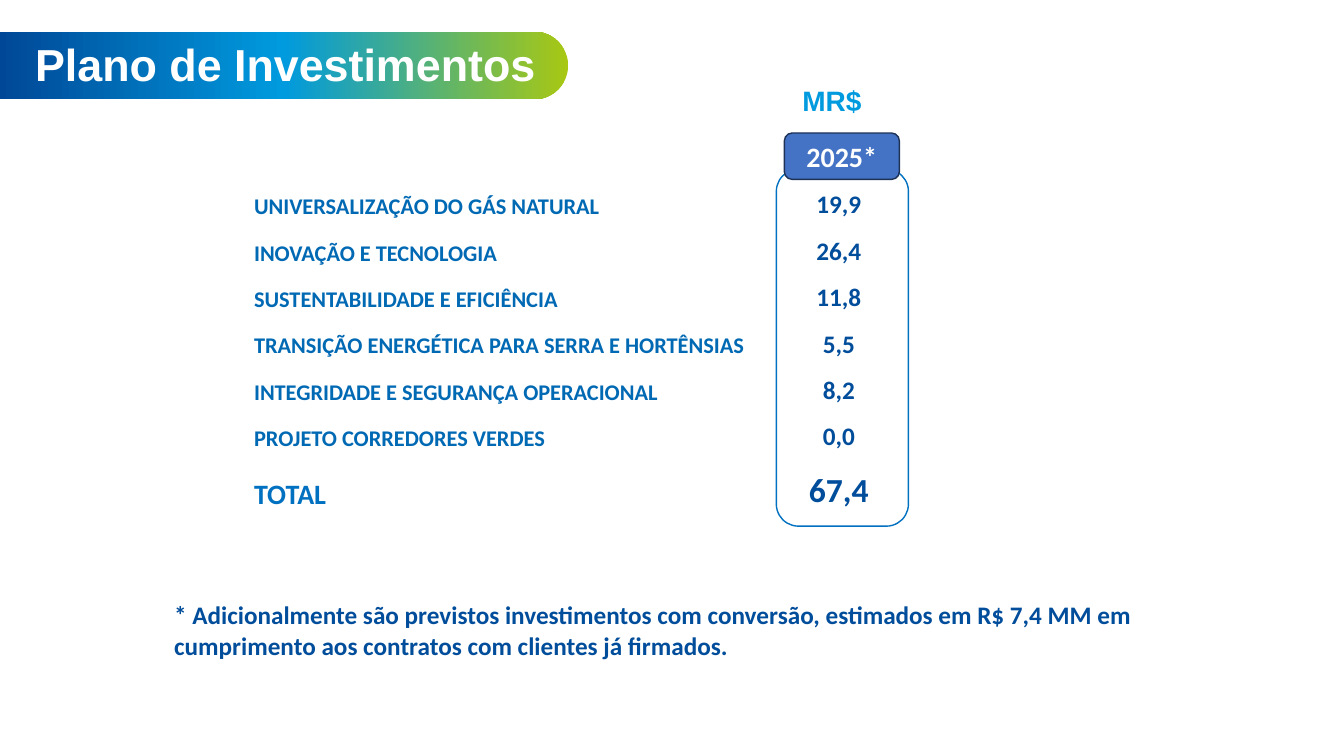
import copy
import pptx
import pptx.util
import pptx.dml.color
import pptx.enum.shapes
import pptx.enum.text
from pptx.util import Inches

theme = {
    "label": "0069B4", "value": "004D9B", "total": "0070C0",
    "unit": "009ADE", "white": "FFFFFF", "badge": "4472C4", "badge_line": "1E3256",
    "banner": [(0, "A8C813"), (0.5, "009ADE"), (1, "004897")],
    "title_size": 32, "heading_size": 20, "label_size": 16,
    "value_size": 18, "total_size": 24,
    "title_font": "Arial", "body_font": "Calibri",
}
SHAPE = pptx.enum.shapes.MSO_SHAPE
ANCHOR = pptx.enum.text.MSO_ANCHOR
CENTER = pptx.enum.text.PP_ALIGN.CENTER


def rgb(name):
    return pptx.dml.color.RGBColor.from_string(theme.get(name, name))


def write(frame, text, size, color, font="body_font", align=None):
    paragraph = frame.paragraphs[0]
    paragraph.text = text
    paragraph.alignment = align
    paragraph.font.name = theme[font]
    paragraph.font.size = pptx.util.Pt(theme[size])
    paragraph.font.bold = True
    paragraph.font.color.rgb = rgb(color)


presentation = pptx.Presentation()
presentation.slide_width = Inches(13.33)
presentation.slide_height = Inches(7.5)
slide = presentation.slides.add_slide(presentation.slide_layouts[6])

investments = [
    ("UNIVERSALIZAÇÃO DO GÁS NATURAL", "19,9"),
    ("INOVAÇÃO E TECNOLOGIA", "26,4"),
    ("SUSTENTABILIDADE E EFICIÊNCIA", "11,8"),
    ("TRANSIÇÃO ENERGÉTICA PARA SERRA E HORTÊNSIAS", "5,5"),
    ("INTEGRIDADE E SEGURANÇA OPERACIONAL", "8,2"),
    ("PROJETO CORREDORES VERDES", "0,0"),
    ("TOTAL", "67,4"),
]
table = slide.shapes.add_table(
    len(investments), 2, Inches(2.51), Inches(1.78), Inches(6.49), Inches(3.32)).table
table.first_row = False
table.horz_banding = False
table.columns[0].width = Inches(5.13)
table.columns[1].width = Inches(1.36)
for row in table.rows:
    row.height = Inches(0.46)
table.rows[0].height = Inches(0.41)
table.rows[len(investments) - 1].height = Inches(0.59)

for index, (label, value) in enumerate(investments):
    label_cell, value_cell = table.rows[index].cells
    for cell in (label_cell, value_cell):
        cell.fill.background()
        cell.vertical_anchor = ANCHOR.BOTTOM
        cell.margin_left = cell.margin_right = cell.margin_top = Inches(0.01)
        cell.margin_bottom = 0
    is_total = label == "TOTAL"
    write(label_cell.text_frame, label,
          "heading_size" if is_total else "label_size", "total" if is_total else "label")
    write(value_cell.text_frame, value,
          "total_size" if is_total else "value_size", "value", align=CENTER)

banner = slide.shapes.add_shape(
    SHAPE.ROUND_2_SAME_RECTANGLE, Inches(2.48), Inches(-2.17), Inches(0.67), Inches(5.64))
banner.rotation = 90
banner.adjustments[0] = 0.5
banner.adjustments[1] = 0
banner.shadow.inherit = False
banner.line.fill.background()
banner.fill.gradient()
banner.fill.gradient_angle = 270
stop_list = banner.fill._fill._gradFill.gsLst
stop_list.append(copy.deepcopy(stop_list[0]))
for stop, (position, color) in zip(banner.fill.gradient_stops, theme["banner"]):
    stop.color.rgb = rgb(color)
    stop.position = position

text_boxes = [
    ((0.25, 0.32, 5.39, 0.64), "Plano de Investimentos", "title_size", "white", "title_font"),
    ((7.86, 0.78, 1.14, 0.44), "MR$", "heading_size", "unit", "title_font"),
    ((1.63, 5.9, 10.87, 0.71),
     "* Adicionalmente são previstos investimentos com conversão, estimados em R$ 7,4 MM "
     "em cumprimento aos contratos com clientes já firmados.",
     "value_size", "value", "body_font"),
]
for bounds, text, size, color, font in text_boxes:
    text_box = slide.shapes.add_textbox(*map(Inches, bounds))
    text_box.text_frame.word_wrap = True
    write(text_box.text_frame, text, size, color, font)

column_frame = slide.shapes.add_shape(
    SHAPE.ROUNDED_RECTANGLE, Inches(7.7), Inches(1.68), Inches(1.31), Inches(3.54))
column_frame.fill.background()
year_badge = slide.shapes.add_shape(
    SHAPE.ROUNDED_RECTANGLE, Inches(7.78), Inches(1.32), Inches(1.14), Inches(0.46))
year_badge.fill.solid()
year_badge.fill.fore_color.rgb = rgb("badge")
for shape, line_color in ((column_frame, "total"), (year_badge, "badge_line")):
    shape.shadow.inherit = False
    shape.line.color.rgb = rgb(line_color)
    shape.line.width = pptx.util.Pt(1)
year_badge.text_frame.vertical_anchor = ANCHOR.MIDDLE
write(year_badge.text_frame, "2025*", "heading_size", "white", align=CENTER)

presentation.save("out.pptx")
